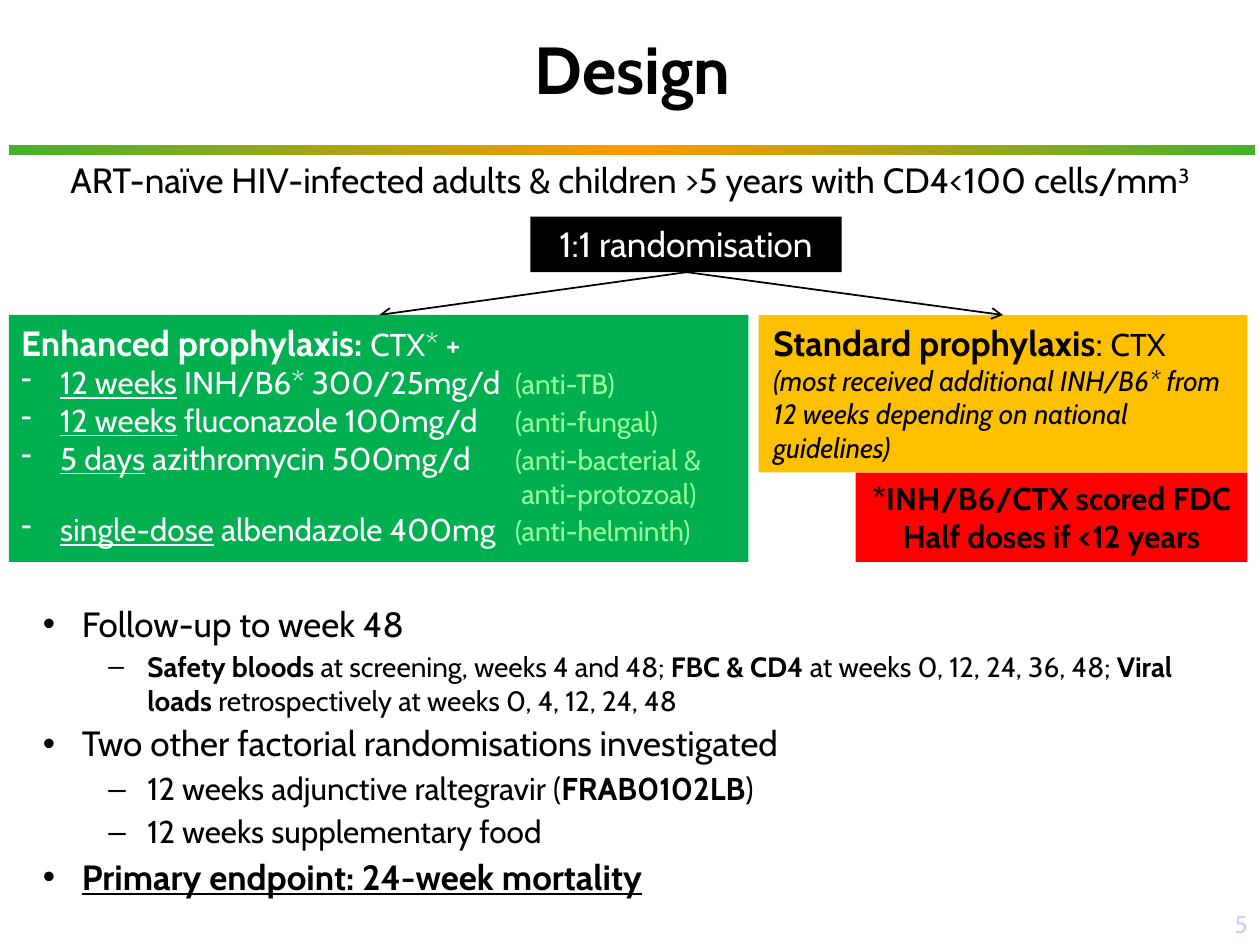
"""Build the trial design slide."""
import copy

import pptx
import pptx.dml.color
import pptx.enum.shapes
import pptx.enum.text
import pptx.oxml.ns
import pptx.oxml.xmlchemy
import pptx.util
from lxml import etree

Inches = pptx.util.Inches
Pt = pptx.util.Pt
RGBColor = pptx.dml.color.RGBColor
Align = pptx.enum.text.PP_ALIGN
Anchor = pptx.enum.text.MSO_ANCHOR
qn = pptx.oxml.ns.qn

FONT = "Cabin"
BLACK = RGBColor(0, 0, 0)
WHITE = RGBColor(255, 255, 255)
GREEN = RGBColor(0x00, 0xB0, 0x50)
LIME = RGBColor(0x99, 0xFF, 0x99)
AMBER = RGBColor(0xFF, 0xC0, 0x00)
RED = RGBColor(0xFF, 0, 0)
LILAC = RGBColor(0xCC, 0xCC, 0xFF)
LEAF = RGBColor(0x46, 0xB2, 0x2C)
ORANGE = RGBColor(0xFF, 0x99, 0x00)

DRUGS = [
    ("12 weeks", " INH/B6* 300/25mg/d", "(anti-TB)"),
    ("12 weeks", " fluconazole 100mg/d", "(anti-fungal)"),
    ("5 days", " azithromycin 500mg/d", "(anti-bacterial &\n\t anti-protozoal)"),
    ("single-dose", " albendazole 400mg", "(anti-helminth)"),
]
POINTS = [
    (0, 20, [("Follow-up to week 48", "")]),
    (1, 16, [("Safety bloods ", "b"), ("at screening, weeks 4 and 48; ", ""),
             ("FBC & CD4 ", "b"), ("at weeks 0, 12, 24, 36, 48; ", ""),
             ("Viral loads ", "b"),
             ("retrospectively at weeks 0, 4, 12, 24, 48", "")]),
    (0, 20, [("Two other factorial randomisations investigated", "")]),
    (1, 18, [("12 weeks adjunctive raltegravir (", ""), ("FRAB0102LB", "b"), (")", "")]),
    (1, 18, [("12 weeks supplementary food", "")]),
    (0, 20, [("Primary endpoint: 24-week mortality", "bu")]),
]


def add_run(para, text, style="", size=None, color=None):
    """Add text to a paragraph, with style letters b, i, u and s for superscript."""
    for i, line in enumerate(text.split("\n")):
        if i:
            para.add_line_break()
        run = para.add_run()
        run.text = line
        font = run.font
        if "b" in style:
            font.bold = True
        if "i" in style:
            font.italic = True
        if "u" in style:
            font.underline = True
        if "s" in style:
            run._r.get_or_add_rPr().set("baseline", "30000")
        if size:
            font.size = Pt(size)
        if color is not None:
            font.color.rgb = color


def add_para(frame, runs, size, color=BLACK, align=Align.LEFT, level=0,
             before=0, left=0, hang=0, bullet=None, tab=None):
    """Fill the first empty paragraph or a new one, and return it."""
    para = frame.paragraphs[0]
    if para.runs:
        para = frame.add_paragraph()
        para.space_before = Pt(before)
    else:
        para.space_before = Pt(0)
    para.alignment = align
    para.level = level
    props = para._p.get_or_add_pPr()
    props.set("marL", str(Inches(left)))
    props.set("indent", str(Inches(-hang)))
    if bullet:
        etree.SubElement(props, qn("a:buChar"), char=bullet)
    else:
        etree.SubElement(props, qn("a:buNone"))
    if tab:
        tabs = etree.SubElement(props, qn("a:tabLst"))
        etree.SubElement(tabs, qn("a:tab"), pos=str(Inches(tab)), algn="l")
    para.font.name = FONT
    para.font.size = Pt(size)
    para.font.color.rgb = color
    for run in runs:
        add_run(para, *run)
    return para


def place(shape, left, top, width, height, anchor=Anchor.TOP):
    """Move a text holder and return its frame, ready for text."""
    shape.left, shape.top = Inches(left), Inches(top)
    shape.width, shape.height = Inches(width), Inches(height)
    frame = shape.text_frame
    frame.word_wrap = True
    frame.auto_size = pptx.enum.text.MSO_AUTO_SIZE.NONE
    frame.vertical_anchor = anchor
    return frame


def add_box(slide, left, top, width, height, fill=None):
    """Add a plain box and return it."""
    kind = pptx.enum.shapes.MSO_SHAPE.RECTANGLE
    box = slide.shapes.add_shape(kind, 0, 0, 0, 0)
    place(box, left, top, width, height)
    box.shadow.inherit = False
    box.line.fill.background()
    if fill is not None:
        box.fill.solid()
        box.fill.fore_color.rgb = fill
    return box


def add_band(slide):
    """Add the shaded band below the title."""
    fill = add_box(slide, 0.07, 1.15, 9.89, 0.08).fill
    fill.gradient()
    fill.gradient_angle = 0
    last = fill.gradient_stops[1]._gs
    last.addnext(copy.deepcopy(last))
    for stop, color, place_at in zip(fill.gradient_stops, (LEAF, ORANGE, LEAF), (0, 0.5, 1)):
        stop.color.rgb = color
        stop.position = place_at


def add_arrow(slide, start, end):
    """Add a thin black arrow between two points."""
    kind = pptx.enum.shapes.MSO_CONNECTOR.STRAIGHT
    arrow = slide.shapes.add_connector(kind, *map(Inches, start + end))
    arrow.line.color.rgb = BLACK
    arrow.line.width = Pt(1)
    etree.SubElement(arrow.line._get_or_add_ln(), qn("a:tailEnd"), type="arrow")
    etree.SubElement(arrow._element.spPr, qn("a:effectLst"))


def add_arms(slide):
    """Add the boxes for both trial arms, the dose note and the split."""
    frame = add_box(slide, 6.02, 2.5, 3.88, 1.25, AMBER).text_frame
    add_para(frame, [
        ("Standard prophylaxis", "b"), (": ", ""), ("CTX\n", "", 18),
        ("(most received additional INH/B6* from 12 weeks depending on national guidelines)",
         "i", 16)], 20, left=0.02)
    for x in (7.96, 3.01):
        add_arrow(slide, (5.45, 2.16), (x, 2.5))
    frame = add_box(slide, 6.79, 3.75, 3.11, 0.71, RED).text_frame
    for line in ("*INH/B6/CTX scored FDC", "Half doses if <12 years"):
        add_para(frame, [(line, "b")], 18, align=Align.CENTER)
    frame = add_box(slide, 0.07, 2.5, 5.87, 1.96, GREEN).text_frame
    add_para(frame, [("Enhanced prophylaxis: ", "b", 20), ("CTX* +", "")], 18, WHITE)
    for time, drug, aim in DRUGS:
        runs = [(time, "u"), (drug + "\t", ""), (aim, "", 16, LIME)]
        add_para(frame, runs, 18, WHITE, left=0.31, hang=0.31, bullet="-", tab=3.92)
    frame = add_box(slide, 4.21, 1.72, 2.47, 0.44, BLACK).text_frame
    frame.word_wrap = False
    add_para(frame, [("1:1 randomisation", "")], 20, WHITE, Align.CENTER)


def main():
    """Build and save the slide."""
    deck = pptx.Presentation()
    deck.slide_width, deck.slide_height = Inches(10), Inches(7.5)
    slide = deck.slides.add_slide(deck.slide_layouts[3])
    title, group, points = slide.placeholders
    add_band(slide)
    frame = place(title, 0.98, 0.25, 8.08, 0.67, Anchor.MIDDLE)
    add_para(frame, [("Design", "b")], 38, align=Align.CENTER).line_spacing = 0.85
    frame = place(group, 0, 1.21, 10, 0.59)
    add_para(frame, [
        ("ART-naïve HIV-infected adults & children >5 years with CD4<100 cells/mm", ""),
        ("3", "s")], 20, align=Align.CENTER)
    add_arms(slide)
    frame = place(points, 0.24, 4.73, 9.4, 2.25)
    for level, size, runs in POINTS:
        add_para(frame, runs, size, level=level, before=3,
                 left=(0.31, 0.83)[level], hang=0.31, bullet="•–"[level])
    box = slide.shapes.add_textbox(0, 0, 0, 0)
    frame = place(box, 9, 7, 1, 0.5, Anchor.BOTTOM)
    add_para(frame, [("5", "")], 14, LILAC, Align.RIGHT)
    deck.save("out.pptx")


if __name__ == "__main__":
    main()
